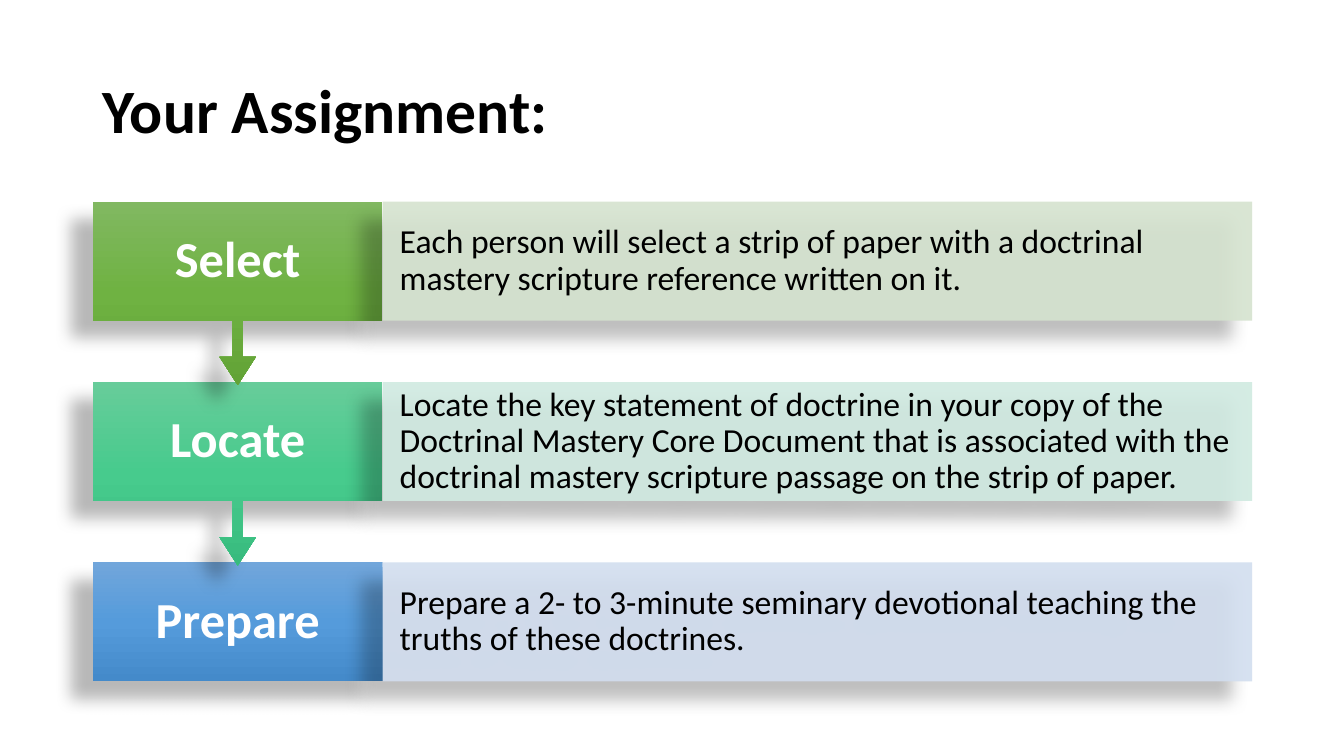
"""Build a slide with three assignment steps joined by downward arrows."""
from pptx import Presentation
from pptx.dml.color import RGBColor
from pptx.enum.text import MSO_ANCHOR, MSO_AUTO_SIZE, PP_ALIGN
from pptx.oxml import parse_xml
from pptx.oxml.ns import nsdecls, qn
from pptx.util import Inches, Pt

TITLE = "Your Assignment:"
STEPS = [
    ("Select",
     "Each person will select a strip of paper with a doctrinal mastery "
     "scripture reference written on it.",
     ("81B861", "6FB242", "62A336"), "D5E3CF"),
    ("Locate",
     "Locate the key statement of doctrine in your copy of the Doctrinal "
     "Mastery Core Document that is associated with the doctrinal mastery "
     "scripture passage on the strip of paper.",
     ("67CC9A", "47CB8D", "38BB7E"), "D0EAE1"),
    ("Prepare",
     "Prepare a 2- to 3-minute seminary devotional teaching the truths of "
     "these doctrines.",
     ("71A6DB", "559BDB", "448ACA"), "D2DEEF"),
]

THEME = {
    "title": {"name": "Calibri", "size": Pt(44), "bold": True, "color": "000000"},
    "label": {"name": "Calibri", "size": Pt(36), "bold": True, "color": "FFFFFF"},
    "detail": {"name": "Calibri", "size": Pt(24), "bold": False, "color": "000000"},
    "shadow": {"color": "000000", "alpha": 28, "blur": 11.8, "dist": 19.7, "angle": 141},
    "detail_alpha": 90,
}

SLIDE_W, SLIDE_H = 13.33, 7.5
LEFT, WIDTH = 0.92, 11.5
SPLIT = LEFT + WIDTH / 4
TOP, PITCH, ROW_H = 2.0, 1.79, 1.18
SHAFT, HEAD, NECK, ARROW_H = 0.05, 0.18, 0.36, 0.64


def write(sp, text, style, align, insets):
    """Put one formatted paragraph in a shape."""
    tf = sp.text_frame
    left, top, right, bottom = map(Inches, insets)
    frame = {"word_wrap": True, "auto_size": MSO_AUTO_SIZE.NONE,
             "vertical_anchor": MSO_ANCHOR.MIDDLE, "margin_left": left,
             "margin_top": top, "margin_right": right, "margin_bottom": bottom}
    for name, value in frame.items():
        setattr(tf, name, value)
    p = tf.paragraphs[0]
    p.alignment, p.line_spacing = align, 0.9
    r = p.add_run()
    r.text = text
    for name in ("name", "size", "bold"):
        setattr(r.font, name, style[name])
    r.font.color.rgb = RGBColor.from_string(style["color"])


def add_outline(s, points):
    """Add a closed, shadowed outline without a border."""
    start, *rest = [(Inches(x), Inches(y)) for x, y in points]
    builder = s.shapes.build_freeform(*start)
    builder.add_line_segments(rest, close=True)
    sp = builder.convert_to_shape()
    sp.line.fill.background()
    sp.shadow.inherit = False
    shade = THEME["shadow"]
    sp._element.spPr.find(qn("a:effectLst")).append(parse_xml(
        f'<a:outerShdw {nsdecls("a")} blurRad="{Pt(shade["blur"])}" '
        f'dist="{Pt(shade["dist"])}" dir="{shade["angle"] * 60000}" '
        f'algn="ctr" rotWithShape="0"><a:srgbClr val="{shade["color"]}">'
        f'<a:alpha val="{shade["alpha"] * 1000}"/></a:srgbClr></a:outerShdw>'))
    return sp


def fill_gradient(sp, colors):
    """Fill a shape from top to bottom with evenly spaced colours."""
    sp.fill.gradient()
    spPr = sp._element.spPr
    step = 100000 // (len(colors) - 1)
    stops = "".join(f'<a:gs pos="{i * step}"><a:srgbClr val="{c}"/></a:gs>'
                    for i, c in enumerate(colors))
    spPr.replace(spPr.find(qn("a:gradFill")), parse_xml(
        f'<a:gradFill {nsdecls("a")} rotWithShape="1"><a:gsLst>{stops}</a:gsLst>'
        '<a:lin ang="5400000" scaled="0"/></a:gradFill>'))


def fill_solid(sp, color, alpha):
    """Fill a shape with a slightly transparent colour."""
    sp.fill.solid()
    sp.fill.fore_color.rgb = RGBColor.from_string(color)
    sp._element.spPr.find(qn("a:solidFill"))[0].append(
        parse_xml(f'<a:alpha {nsdecls("a")} val="{alpha * 1000}"/>'))


def box(left, right, top):
    """Return the corners of a row's box, clockwise."""
    return [(left, top), (right, top), (right, top + ROW_H), (left, top + ROW_H)]


def arrow(top):
    """Return the points of the arrow below a row, from right to left."""
    mid, base = (LEFT + SPLIT) / 2, top + ROW_H
    right = [(SHAFT, base), (SHAFT, base + NECK), (HEAD, base + NECK)]
    return ([(mid + dx, y) for dx, y in right] + [(mid, base + ARROW_H)]
            + [(mid - dx, y) for dx, y in reversed(right)])


def main():
    prs = Presentation()
    prs.slide_width, prs.slide_height = Inches(SLIDE_W), Inches(SLIDE_H)
    s = prs.slides.add_slide(prs.slide_layouts[5])
    title = s.shapes.title
    place = {"left": LEFT, "top": 0.4, "width": WIDTH, "height": 1.45}
    for name, value in place.items():
        setattr(title, name, Inches(value))
    write(title, TITLE, THEME["title"], PP_ALIGN.LEFT, (0.1, 0.05, 0.1, 0.05))

    for i, (label, detail, colors, tint) in reversed(list(enumerate(STEPS))):
        top = TOP + i * PITCH
        corners = box(LEFT, SPLIT, top)
        has_arrow = i < len(STEPS) - 1
        if has_arrow:
            corners[3:3] = arrow(top)
        sp = add_outline(s, corners)
        fill_gradient(sp, colors)
        below = ARROW_H if has_arrow else 0
        write(sp, label, THEME["label"], PP_ALIGN.CENTER, (0.2, 0.28, 0.2, 0.28 + below))

        sp = add_outline(s, box(SPLIT, LEFT + WIDTH, top))
        fill_solid(sp, tint, THEME["detail_alpha"])
        write(sp, detail, THEME["detail"], PP_ALIGN.LEFT, (0.17, 0.33, 0.17, 0.33))

    prs.save("out.pptx")


if __name__ == "__main__":
    main()
